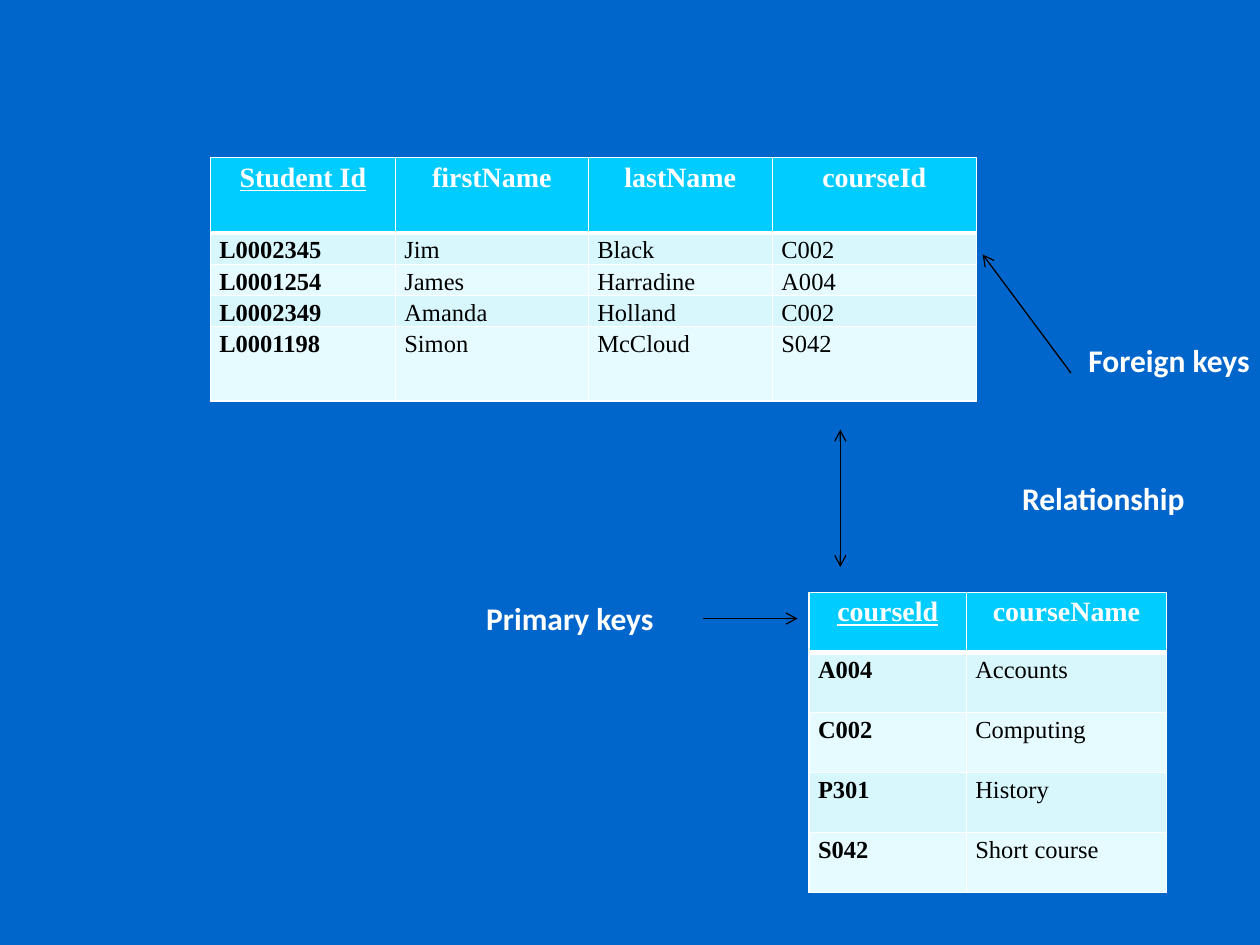
from dataclasses import dataclass

from lxml import etree
from pptx import Presentation
from pptx.dml.color import RGBColor
from pptx.enum.shapes import MSO_CONNECTOR
from pptx.enum.text import MSO_ANCHOR, PP_ALIGN
from pptx.oxml.ns import qn
from pptx.util import Cm, Pt

STRAIGHT = MSO_CONNECTOR.STRAIGHT
MIDDLE = MSO_ANCHOR.MIDDLE
LEFT, CENTER, RIGHT = PP_ALIGN.LEFT, PP_ALIGN.CENTER, PP_ALIGN.RIGHT


@dataclass(frozen=True)
class Theme:
    background: RGBColor = RGBColor(0x00, 0x66, 0xCC)
    header: RGBColor = RGBColor(0x00, 0xCC, 0xFF)
    bands: tuple = (RGBColor(0xE5, 0xFB, 0xFF), RGBColor(0xD7, 0xF7, 0xFD))
    light: RGBColor = RGBColor(0xFF, 0xFF, 0xFF)
    dark: RGBColor = RGBColor(0x00, 0x00, 0x00)
    table_font: str = "Times New Roman"
    label_font: str = "Calibri"
    header_size: Pt = Pt(16)
    body_size: Pt = Pt(14)
    label_size: Pt = Pt(18)
    thin: Pt = Pt(1)
    thick: Pt = Pt(3)
    arrow: Pt = Pt(0.75)


THEME = Theme()


def set_format(target, values):
    for name, value in values.items():
        setattr(target, name, value)


def set_borders(cell, widths):
    """Draw the four cell borders; widths maps the sides L, R, T, B to lengths."""
    properties = cell._tc.get_or_add_tcPr()
    for position, (side, width) in enumerate(widths.items()):
        line = etree.Element(qn(f"a:ln{side}"), w=str(width))
        fill = etree.SubElement(line, qn("a:solidFill"))
        etree.SubElement(fill, qn("a:srgbClr"), val=str(THEME.light))
        properties.insert(position, line)


prs = Presentation()
prs.slide_width, prs.slide_height = Cm(25.4), Cm(19.05)
slide = prs.slides.add_slide(prs.slide_layouts[6])
slide.background.fill.solid()
slide.background.fill.fore_color.rgb = THEME.background

# Student and course tables: left, top, column widths, row heights, records
tables = [
    (4.24, 3.18, [3.73, 3.89, 3.71, 4.11], [1.52, 0.62, 0.62, 0.62, 1.5], [
        ["Student Id", "firstName", "lastName", "courseId"],
        ["L0002345", "Jim", "Black", "C002"],
        ["L0001254", "James", "Harradine", "A004"],
        ["L0002349", "Amanda", "Holland", "C002"],
        ["L0001198", "Simon", "McCloud", "S042"],
    ]),
    (16.31, 11.94, [3.17, 4.04], [1.21] * 5, [
        ["courseld", "courseName"],
        ["A004", "Accounts"],
        ["C002", "Computing"],
        ["P301", "History"],
        ["S042", "Short course"],
    ]),
]
cell_margins = {"margin_left": Cm(0.18), "margin_right": Cm(0.18),
                "margin_top": 0, "margin_bottom": 0}
for left, top, widths, heights, records in tables:
    table = slide.shapes.add_table(
        len(heights), len(widths), Cm(left), Cm(top),
        Cm(sum(widths)), Cm(sum(heights))).table
    for column, width in zip(table.columns, widths):
        column.width = Cm(width)
    for row, height in zip(table.rows, heights):
        row.height = Cm(height)
    for r, record in enumerate(records):
        is_header = r == 0
        for c, value in enumerate(record):
            is_key = c == 0
            cell = table.cell(r, c)
            set_format(cell, cell_margins)
            cell.fill.solid()
            cell.fill.fore_color.rgb = THEME.header if is_header else THEME.bands[r % 2]
            set_borders(cell, {
                "L": THEME.thin, "R": THEME.thin,
                "T": THEME.thick if r == 1 else THEME.thin,
                "B": THEME.thick if is_header else THEME.thin})
            cell.text = value
            paragraph = cell.text_frame.paragraphs[0]
            set_format(paragraph, {"alignment": CENTER if is_header else LEFT,
                                   "line_spacing": 1.15})
            font = paragraph.runs[0].font
            set_format(font, {
                "name": THEME.table_font,
                "size": THEME.header_size if is_header else THEME.body_size,
                "bold": is_header or is_key,
                "underline": is_header and is_key})
            font.color.rgb = THEME.light if is_header else THEME.dark

# Arrows: start x, start y, end x, end y, ends that carry an arrowhead
arrows = [
    (21.59, 7.52, 19.81, 5.13, ["tailEnd"]),
    (16.94, 8.66, 16.94, 11.43, ["headEnd", "tailEnd"]),
    (14.17, 12.47, 16.08, 12.47, ["tailEnd"]),
]
for x1, y1, x2, y2, heads in arrows:
    arrow = slide.shapes.add_connector(STRAIGHT, Cm(x1), Cm(y1), Cm(x2), Cm(y2))
    arrow.line.width = THEME.arrow
    arrow.line.color.rgb = THEME.dark
    for head in heads:
        etree.SubElement(arrow.line._get_or_add_ln(), qn(f"a:{head}"), type="arrow")
    etree.SubElement(arrow._element.spPr, qn("a:effectLst"))

# Labels: text, left, top, width, height, alignment, right and bottom margins
labels = [
    ("Primary keys", 9.09, 11.91, 4.8, 1.09, CENTER, 0.25, 0.13),
    ("Foreign keys", 21.69, 5.92, 3.71, 3.18, LEFT, 0, 0.64),
    ("Relationship", 18.54, 9.47, 5.59, 1.8, RIGHT, 0.25, 0.81),
]
for text, left, top, width, height, alignment, right_margin, bottom_margin in labels:
    frame = slide.shapes.add_textbox(Cm(left), Cm(top), Cm(width), Cm(height)).text_frame
    set_format(frame, {"word_wrap": True, "vertical_anchor": MIDDLE, "text": text,
                       "margin_right": Cm(right_margin),
                       "margin_bottom": Cm(bottom_margin)})
    paragraph = frame.paragraphs[0]
    paragraph.alignment = alignment
    font = paragraph.runs[0].font
    set_format(font, {"name": THEME.label_font, "size": THEME.label_size, "bold": True})
    font.color.rgb = THEME.light

prs.save("out.pptx")
